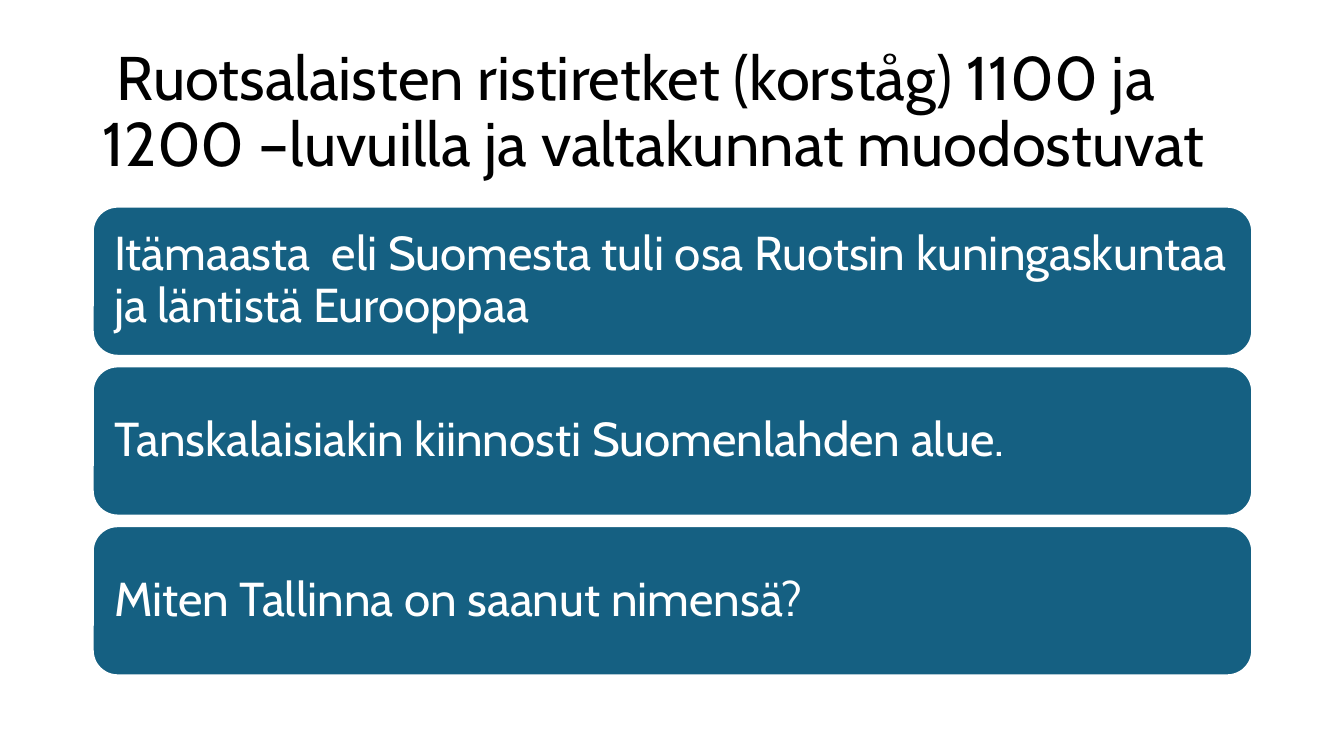
from pptx import Presentation
from pptx.dml.color import RGBColor
from pptx.enum import shapes, text
from pptx.util import Inches, Pt

FONT = "Cabin"
BLACK = RGBColor(0x00, 0x00, 0x00)
WHITE = RGBColor(0xFF, 0xFF, 0xFF)
TEAL = RGBColor(0x15, 0x60, 0x82)

TITLE = " Ruotsalaisten ristiretket (korståg) 1100 ja 1200 –luvuilla ja valtakunnat muodostuvat"
POINTS = [
    "Itämaasta  eli Suomesta tuli osa Ruotsin kuningaskuntaa ja läntistä Eurooppaa",
    "Tanskalaisiakin kiinnosti Suomenlahden alue.",
    "Miten Tallinna on saanut nimensä?",
]


def write_text(sp, content, size, color):
    tf = sp.text_frame
    tf.text = content
    tf.word_wrap = True
    tf.auto_size = text.MSO_AUTO_SIZE.NONE
    tf.vertical_anchor = text.MSO_ANCHOR.MIDDLE
    p = tf.paragraphs[0]
    p.alignment = text.PP_ALIGN.LEFT
    p.line_spacing = 0.9
    font = p.runs[0].font
    font.name = FONT
    font.size = Pt(size)
    font.color.rgb = color
    return tf


def add_title(s, left, top, width, height):
    sp = s.shapes.title
    sp.left, sp.top = Inches(left), Inches(top)
    sp.width, sp.height = Inches(width), Inches(height)
    write_text(sp, TITLE, 44, BLACK)


def add_cards(s, left, top, width, height, card_height=1.48):
    pitch = (height - card_height) / (len(POINTS) - 1)
    for i, point in enumerate(POINTS):
        sp = s.shapes.add_shape(
            shapes.MSO_SHAPE.ROUNDED_RECTANGLE,
            Inches(left), Inches(top + i * pitch), Inches(width), Inches(card_height),
        )
        sp.shadow.inherit = False
        sp.fill.solid()
        sp.fill.fore_color.rgb = TEAL
        sp.line.color.rgb = WHITE
        sp.line.width = Pt(1.5)
        tf = write_text(sp, point, 34, WHITE)
        tf.margin_left = tf.margin_right = Inches(0.14)
        tf.margin_top = tf.margin_bottom = Inches(0.14)


def main():
    prs = Presentation()
    prs.slide_width, prs.slide_height = Inches(13.33), Inches(7.5)
    s = prs.slides.add_slide(prs.slide_layouts[5])
    add_title(s, 0.92, 0.4, 11.5, 1.45)
    add_cards(s, 0.92, 2.05, 11.5, 4.65)
    prs.save("out.pptx")


if __name__ == "__main__":
    main()
